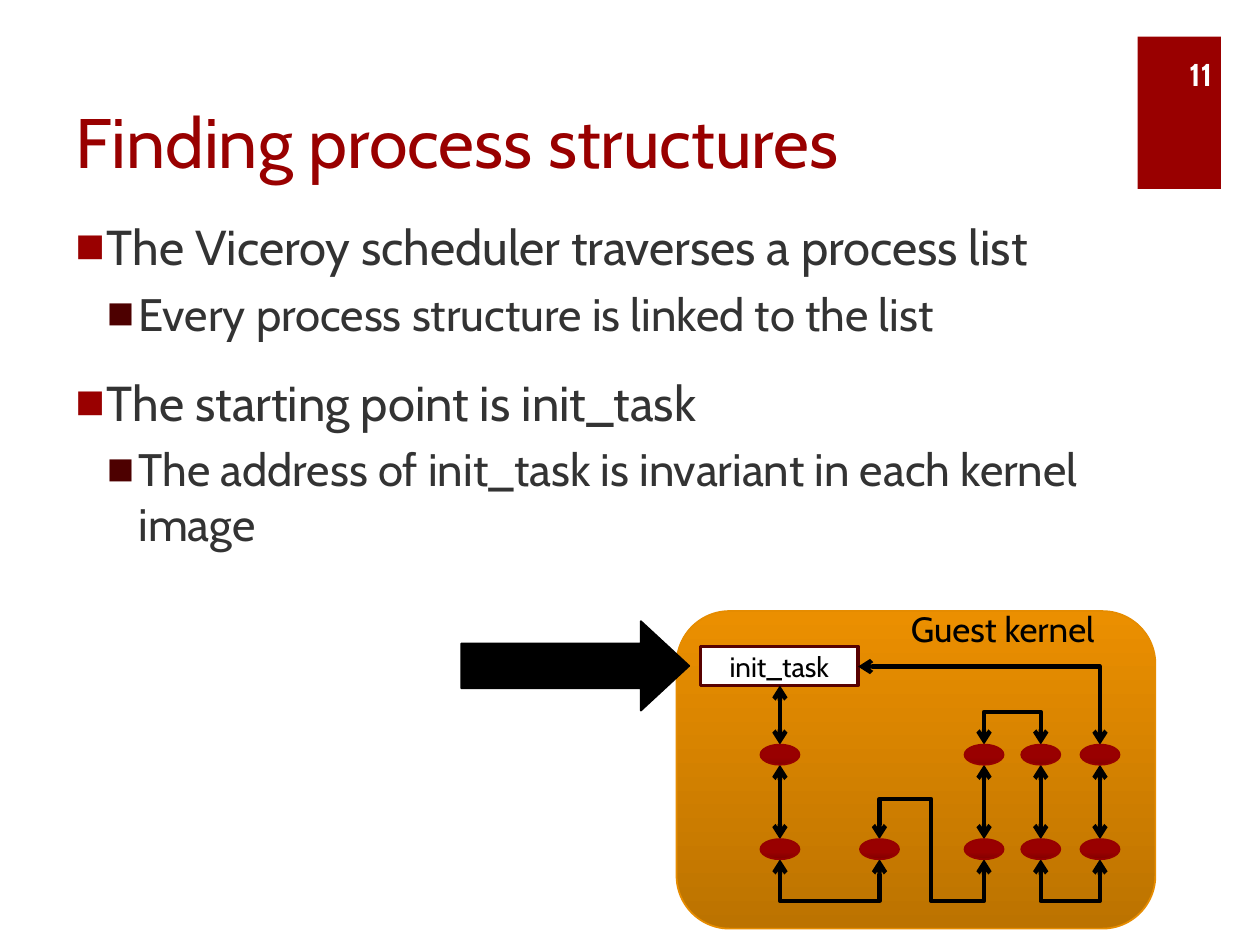
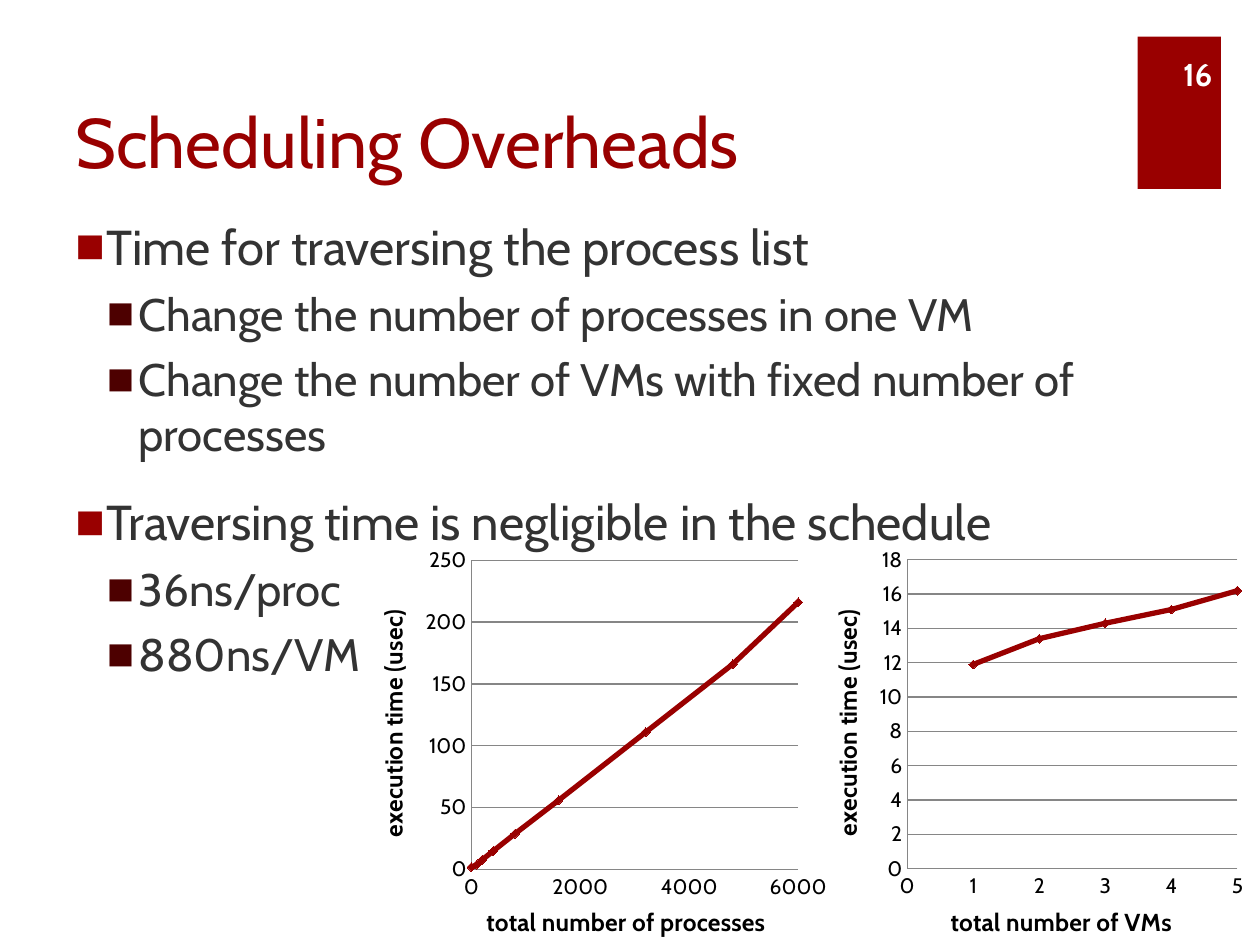
from lxml import etree
from pptx import Presentation
from pptx.chart.data import XyChartData
from pptx.dml.color import RGBColor
from pptx.enum.chart import XL_CHART_TYPE, XL_MARKER_STYLE, XL_TICK_MARK
from pptx.enum.shapes import MSO_CONNECTOR, MSO_SHAPE
from pptx.enum.text import MSO_ANCHOR, PP_ALIGN
from pptx.oxml.ns import qn
from pptx.util import Inches, Pt

RECTANGLE, ROUNDED = MSO_SHAPE.RECTANGLE, MSO_SHAPE.ROUNDED_RECTANGLE
ELLIPSE, RIGHT_ARROW = MSO_SHAPE.OVAL, MSO_SHAPE.RIGHT_ARROW
TOP, MIDDLE, BOTTOM = MSO_ANCHOR.TOP, MSO_ANCHOR.MIDDLE, MSO_ANCHOR.BOTTOM
LEFT, CENTER, RIGHT = PP_ALIGN.LEFT, PP_ALIGN.CENTER, PP_ALIGN.RIGHT

FONT = "Cabin"
RED, DARK_RED, TEXT, BLACK, WHITE = "990000", "4D0000", "333333", "000000", "FFFFFF"
GRID = "868686"

# Per bullet level: text size, space before, indent in inches, bullet colour
LEVELS = [(28, 18, 0.25, RED), (26, 6, 0.5, DARK_RED)]

STRUCTURES = {
    "title": "Finding process structures",
    "number": "11",
    "bullets": [
        (0, "The Viceroy scheduler traverses a process list"),
        (1, "Every process structure is linked to the list"),
        (0, "The starting point is init_task"),
        (1, "The address of init_task is invariant in each kernel image"),
    ],
}
OVERHEADS = {
    "title": "Scheduling Overheads",
    "number": "16",
    "bullets": [
        (0, "Time for traversing the process list"),
        (1, "Change the number of processes in one VM"),
        (1, "Change the number of VMs with fixed number of processes"),
        (0, "Traversing time is negligible in the schedule"),
        (1, "36ns/proc"),
        (1, "880ns/VM"),
    ],
}

# Kernel diagram: named columns and heights, then nodes and routes on them
COLUMNS = {"a": 6.19, "b": 6.98, "gap": 7.39, "c": 7.81, "d": 8.26, "e": 8.73,
           "task": 6.81}
NODE_WIDTH, NODE_HEIGHT = 0.31, 0.16
ROWS = {"upper": 5.99, "lower": 6.74}
HEIGHTS = {"task middle": 5.29, "task bottom": 5.44, "over": 5.65,
           "between": 6.34, "under": 7.15}
for row, center in ROWS.items():
    HEIGHTS[row + " top"] = center - NODE_HEIGHT / 2
    HEIGHTS[row + " bottom"] = center + NODE_HEIGHT / 2
NODES = {"upper": "acde", "lower": "abcde"}
ROUTES = [
    [("a", "upper top"), ("a", "task bottom")],
    [("a", "lower bottom"), ("a", "under"), ("b", "under"), ("b", "lower bottom")],
    [("b", "lower top"), ("b", "between"), ("gap", "between"),
     ("gap", "under"), ("c", "under"), ("c", "lower bottom")],
    [("c", "upper top"), ("c", "over"), ("d", "over"), ("d", "upper top")],
    [("d", "lower bottom"), ("d", "under"), ("e", "under"), ("e", "lower bottom")],
    [("e", "upper top"), ("e", "task middle"), ("task", "task middle")],
] + [[(column, "lower top"), (column, "upper bottom")] for column in NODES["upper"]]

CHARTS = [
    {
        "box": (2.95, 4.22, 3.7, 3.28), "plot": (0.214, 0.069, 0.701, 0.749),
        "x title": "total number of processes", "x scale": (6000, 2000),
        "y scale": (250, 50),
        "points": [(0, 2), (100, 4), (200, 8), (400, 15), (800, 29), (1600, 56),
                   (3200, 111), (4800, 166), (6000, 216)],
    },
    {
        "box": (6.5, 4.22, 3.5, 3.28), "plot": (0.2, 0.068, 0.749, 0.748),
        "x title": "total number of VMs", "x scale": (5, 1),
        "y scale": (18, 2),
        "points": [(1, 11.9), (2, 13.4), (3, 14.3), (4, 15.1), (5, 16.2)],
    },
]


def rgb(value):
    return RGBColor.from_string(value)


def inches(values):
    return [Inches(value) for value in values]


def style_font(font, size, color, bold=False):
    font.name, font.size, font.bold = FONT, Pt(size), bold
    font.color.rgb = rgb(color)


def add_run(paragraph, text, size, color, bold=False):
    run = paragraph.add_run()
    run.text = text
    style_font(run.font, size, color, bold)


def text_frame_of(shape, anchor):
    frame = shape.text_frame
    frame.word_wrap = True
    frame.vertical_anchor = anchor
    return frame


def add_text(slide, box, text, size, color, anchor=TOP, align=LEFT, bold=False):
    shape = slide.shapes.add_textbox(*inches(box))
    paragraph = text_frame_of(shape, anchor).paragraphs[0]
    paragraph.alignment = align
    add_run(paragraph, text, size, color, bold)


def add_shape(slide, kind, box, fill, line=None, width=1):
    """Add a preset shape; fill is a colour or (bottom colour, top colour, top stop)."""
    shape = slide.shapes.add_shape(kind, *inches(box))
    shape.shadow.inherit = False
    if isinstance(fill, str):
        shape.fill.solid()
        shape.fill.fore_color.rgb = rgb(fill)
    else:
        bottom_color, top_color, top_stop = fill
        shape.fill.gradient()
        shape.fill.gradient_angle = 90
        bottom, top = shape.fill.gradient_stops
        bottom.color.rgb, bottom.position = rgb(bottom_color), 0
        top.color.rgb, top.position = rgb(top_color), top_stop
    if line:
        shape.line.color.rgb = rgb(line)
        shape.line.width = Pt(width)
    else:
        shape.line.fill.background()
    return shape


def add_bullets(slide, bullets):
    box = slide.shapes.add_textbox(*inches((0.5, 1.67, 8.92, 5.28)))
    frame = text_frame_of(box, TOP)
    for index, (level, text) in enumerate(bullets):
        paragraph = frame.add_paragraph() if index else frame.paragraphs[0]
        size, before, indent, color = LEVELS[level]
        paragraph.level = level
        paragraph.space_before = Pt(before)
        properties = paragraph._p.get_or_add_pPr()
        properties.set("marL", str(Inches(indent)))
        properties.set("indent", str(Inches(-0.25)))
        bullet_color = etree.SubElement(properties, qn("a:buClr"))
        etree.SubElement(bullet_color, qn("a:srgbClr"), val=color)
        etree.SubElement(properties, qn("a:buFont"), typeface="Arial")
        etree.SubElement(properties, qn("a:buChar"), char="■")
        add_run(paragraph, text, size, TEXT)


def add_base_slide(presentation, content):
    slide = presentation.slides.add_slide(presentation.slide_layouts[6])
    add_shape(slide, RECTANGLE, (9.03, 0.29, 0.66, 1.21), RED)
    add_text(slide, (0.5, 0.25, 8.42, 1.25), content["title"], 40, RED, BOTTOM)
    add_bullets(slide, content["bullets"])
    add_text(slide, (8.78, 0.39, 0.94, 0.4), content["number"], 18, WHITE,
             MIDDLE, RIGHT, bold=True)
    return slide


def add_route(slide, stops):
    """Draw a line with arrowheads at both ends through the named stops."""
    points = [inches((COLUMNS[column], HEIGHTS[height])) for column, height in stops]
    if len(points) == 2:
        route = slide.shapes.add_connector(MSO_CONNECTOR.STRAIGHT, *points[0], *points[1])
    else:
        builder = slide.shapes.build_freeform(*points[0])
        builder.add_line_segments(points[1:], close=False)
        route = builder.convert_to_shape()
        route.fill.background()
    route.line.color.rgb = rgb(BLACK)
    route.line.width = Pt(2.5)
    outline = route.get_or_add_ln()
    for end in ("a:headEnd", "a:tailEnd"):
        etree.SubElement(outline, qn(end), type="arrow")
    etree.SubElement(route.element.spPr, qn("a:effectLst"))


def add_kernel_diagram(slide):
    add_shape(slide, ROUNDED, (5.37, 4.85, 3.8, 2.52), ("BC7300", "EB8F00", 1), "E68C00")
    task = add_shape(slide, RECTANGLE, (5.56, 5.13, 1.25, 0.31), WHITE, "580101", 2)
    paragraph = text_frame_of(task, MIDDLE).paragraphs[0]
    paragraph.alignment = CENTER
    add_run(paragraph, "init_task", 16, BLACK)
    for route in ROUTES:
        add_route(slide, route)
    for row, columns in NODES.items():
        for column in columns:
            box = (COLUMNS[column] - NODE_WIDTH / 2, ROWS[row] - NODE_HEIGHT / 2,
                   NODE_WIDTH, NODE_HEIGHT)
            add_shape(slide, ELLIPSE, box, ("830000", RED, 0.35), "960000")
    add_text(slide, (7.13, 4.77, 2.15, 0.48), "Guest kernel", 20, BLACK)
    pointer = add_shape(slide, RIGHT_ARROW, (3.66, 4.93, 1.81, 0.71), BLACK, BLACK)
    pointer.adjustments[1] = 0.54


def place_plot(chart, plot):
    area = next(chart.element.iter(qn("c:plotArea")))
    for layout in area.findall(qn("c:layout")):
        area.remove(layout)
    layout = etree.Element(qn("c:layout"))
    manual = etree.SubElement(layout, qn("c:manualLayout"))
    settings = [("layoutTarget", "inner"), ("xMode", "edge"), ("yMode", "edge")]
    for name, value in settings + list(zip("xywh", plot)):
        etree.SubElement(manual, qn("c:" + name), val=str(value))
    area.insert(0, layout)


def style_axis(axis, title, scale, gridlines):
    axis.minimum_scale = 0
    axis.maximum_scale, axis.major_unit = scale
    axis.major_tick_mark = axis.minor_tick_mark = XL_TICK_MARK.NONE
    axis.has_major_gridlines = gridlines
    lines = [axis.format.line]
    if gridlines:
        lines.append(axis.major_gridlines.format.line)
    for line in lines:
        line.color.rgb = rgb(GRID)
        line.width = Pt(0.75)
    axis.tick_labels.number_format = "General"
    axis.tick_labels.number_format_is_linked = False
    style_font(axis.tick_labels.font, 12, BLACK)
    add_run(axis.axis_title.text_frame.paragraphs[0], title, 14, BLACK, bold=True)


def add_time_chart(slide, content):
    data = XyChartData()
    points = data.add_series("Series 1")
    for x, y in content["points"]:
        points.add_data_point(x, y)
    chart = slide.shapes.add_chart(XL_CHART_TYPE.XY_SCATTER_LINES,
                                   *inches(content["box"]), data).chart
    chart.has_title = chart.has_legend = False
    style_font(chart.font, 12, BLACK)
    chart.plots[0].vary_by_categories = False
    style_axis(chart.category_axis, content["x title"], content["x scale"], False)
    style_axis(chart.value_axis, "execution time (usec)", content["y scale"], True)
    body = next(chart.value_axis.axis_title._element.iter(qn("a:bodyPr")))
    body.set("rot", "-5400000")
    body.set("vert", "horz")
    series = chart.plots[0].series[0]
    series.smooth = False
    series.format.line.color.rgb = rgb(RED)
    series.format.line.width = Pt(3)
    series.marker.style, series.marker.size = XL_MARKER_STYLE.DIAMOND, 5
    series.marker.format.fill.solid()
    series.marker.format.fill.fore_color.rgb = rgb(RED)
    series.marker.format.line.color.rgb = rgb(RED)
    place_plot(chart, content["plot"])


def main():
    presentation = Presentation()
    presentation.slide_width, presentation.slide_height = Inches(10), Inches(7.5)
    add_kernel_diagram(add_base_slide(presentation, STRUCTURES))
    overheads = add_base_slide(presentation, OVERHEADS)
    for content in CHARTS:
        add_time_chart(overheads, content)
    presentation.save("out.pptx")


if __name__ == "__main__":
    main()
